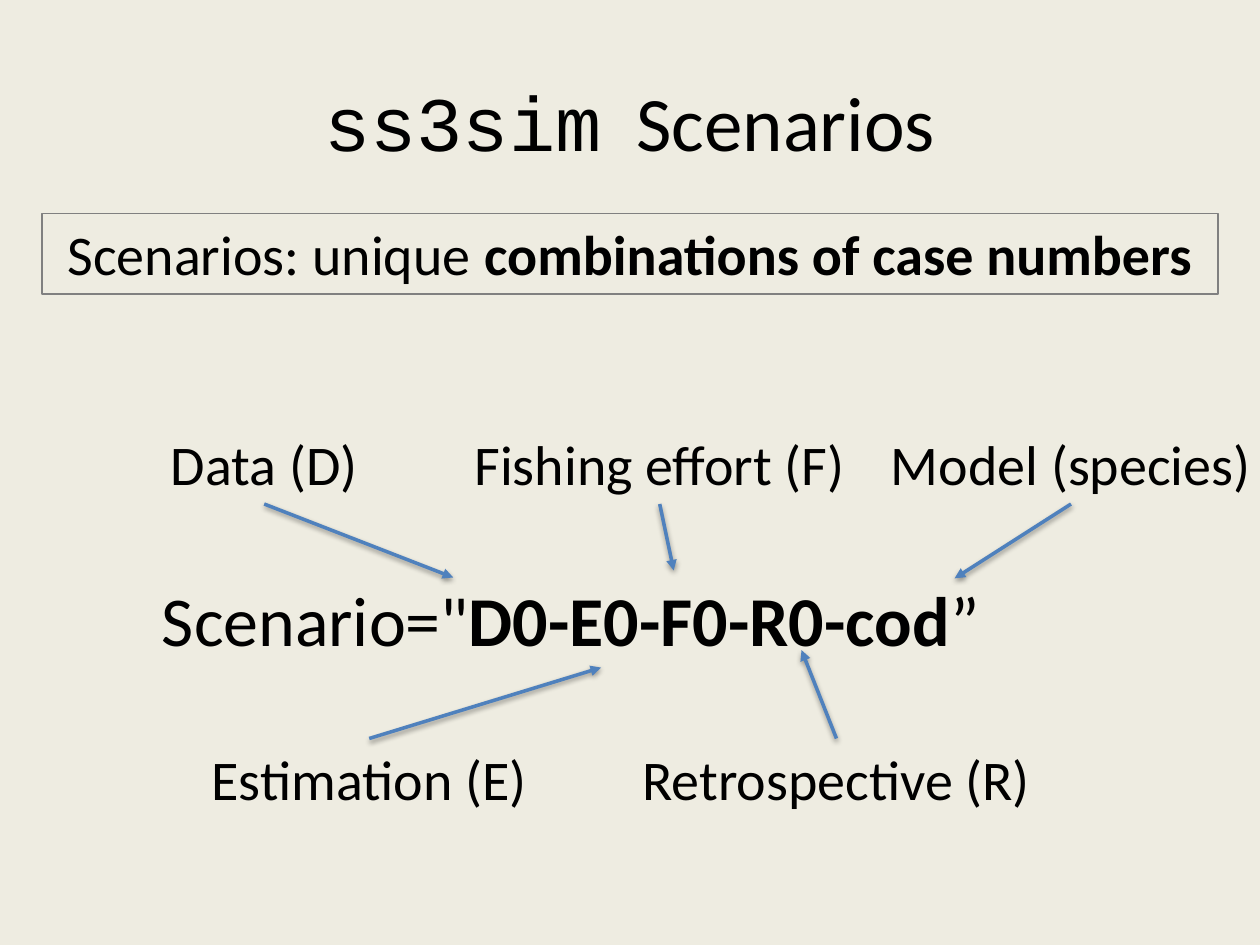
from lxml import etree
from pptx import Presentation
from pptx.dml.color import RGBColor
from pptx.enum.shapes import MSO_CONNECTOR, MSO_SHAPE
from pptx.enum.text import MSO_ANCHOR, MSO_AUTO_SIZE, PP_ALIGN
from pptx.oxml import parse_xml
from pptx.oxml.ns import nsdecls, qn
from pptx.util import Pt

STRAIGHT = MSO_CONNECTOR.STRAIGHT
RECTANGLE = MSO_SHAPE.RECTANGLE
LEFT, CENTER = PP_ALIGN.LEFT, PP_ALIGN.CENTER
TOP, MIDDLE = MSO_ANCHOR.TOP, MSO_ANCHOR.MIDDLE
FIT, FIXED = MSO_AUTO_SIZE.SHAPE_TO_FIT_TEXT, MSO_AUTO_SIZE.NONE
TOP_SIDE, BOTTOM_SIDE = 0, 2

COLORS = {
    "background": "EEECE1",
    "text": "000000",
    "arrow": "4F81BD",
    "border": "808080",
    "shadow": "000000",
}
BODY, CODE = "Calibri", "Courier New"

LABEL_HEIGHT = 46
ABOVE, BELOW = -84, 96
CASES = [
    ("Fishing effort (F)", 172, 239, ABOVE, (299.5, 0)),
    ("Estimation (E)", 6, 239, BELOW, (258, 55.5)),
    ("Data (D)", -31.5, 194, ABOVE, (173.5, 4)),
    ("Retrospective (R)", 273, 239, BELOW, (372.5, 45.5)),
    ("Model (species)", 407, 239, ABOVE, (460, 4.5)),
]


def color(key):
    """Return the named palette colour."""
    return RGBColor.from_string(COLORS[key])


def write(shape, parts, size, align=CENTER, anchor=TOP, wrap=True, fit=FIT):
    """Write (text, font, bold) parts as one paragraph in a shape."""
    frame = shape.text_frame
    frame.word_wrap = wrap
    frame.auto_size = fit
    frame.vertical_anchor = anchor
    paragraph = frame.paragraphs[0]
    paragraph.alignment = align
    for text, font, bold in parts:
        run = paragraph.add_run()
        run.text = text
        run.font.name = font
        run.font.size = Pt(size)
        run.font.bold = bold
        run.font.color.rgb = color("text")


def add_text(slide, box, parts, size, **layout):
    """Add a text box at the given box and return it."""
    text_box = slide.shapes.add_textbox(*map(Pt, box))
    write(text_box, parts, size, **layout)
    return text_box


def add_arrow(slide, label, side, x, y):
    """Draw a shadowed arrow from a side of a label to a point."""
    arrow = slide.shapes.add_connector(STRAIGHT, 0, 0, Pt(x), Pt(y))
    arrow.begin_connect(label, side)
    arrow.line.color.rgb = color("arrow")
    arrow.line.width = Pt(2)
    properties = arrow._element.spPr
    etree.SubElement(properties.find(qn("a:ln")), qn("a:tailEnd"), type="triangle")
    properties.append(parse_xml(
        f'<a:effectLst {nsdecls("a")}>'
        f'<a:outerShdw blurRad="{Pt(3.1)}" dist="{Pt(1.6)}" dir="5400000" rotWithShape="0">'
        f'<a:srgbClr val="{COLORS["shadow"]}"><a:alpha val="38000"/></a:srgbClr>'
        '</a:outerShdw></a:effectLst>'))


def add_title(slide, box):
    """Add the slide title."""
    parts = [("ss3sim", CODE, False), ("  Scenarios", BODY, False)]
    add_text(slide, box, parts, 44, anchor=MIDDLE, fit=FIXED)


def add_definition(slide, box):
    """Add the outlined definition of a scenario."""
    definition = slide.shapes.add_shape(RECTANGLE, *map(Pt, box))
    definition.shadow.inherit = False
    definition.fill.background()
    definition.line.color.rgb = color("border")
    definition.line.width = Pt(0.75)
    parts = [("Scenarios: unique ", BODY, False),
             ("combinations of case numbers", BODY, True)]
    write(definition, parts, 32)


def add_scenario(slide, box):
    """Add the scenario string with labelled arrows to its parts."""
    left, top, _, _ = box
    for case, dx, width, dy, (tip_x, tip_y) in CASES:
        label = add_text(slide, (left + dx, top + dy, width, LABEL_HEIGHT),
                         [(case, BODY, False)], 32)
        side = BOTTOM_SIDE if dy == ABOVE else TOP_SIDE
        add_arrow(slide, label, side, left + tip_x, top + tip_y)
    parts = [('Scenario="', BODY, False), ("D0-E0-F0-R0-cod", BODY, True),
             ("”", BODY, False)]
    add_text(slide, box, parts, 40, align=LEFT, wrap=False)


def main():
    """Build and save the scenario slide."""
    deck = Presentation()
    deck.slide_width, deck.slide_height = Pt(720), Pt(540)
    slide = deck.slides.add_slide(deck.slide_layouts[6])
    slide.background.fill.solid()
    slide.background.fill.fore_color.rgb = color("background")
    add_title(slide, (36, 24, 648, 90))
    add_definition(slide, (24, 122, 672, LABEL_HEIGHT))
    add_scenario(slide, (85.5, 326, 484, 55.5))
    deck.save("out.pptx")


if __name__ == "__main__":
    main()
